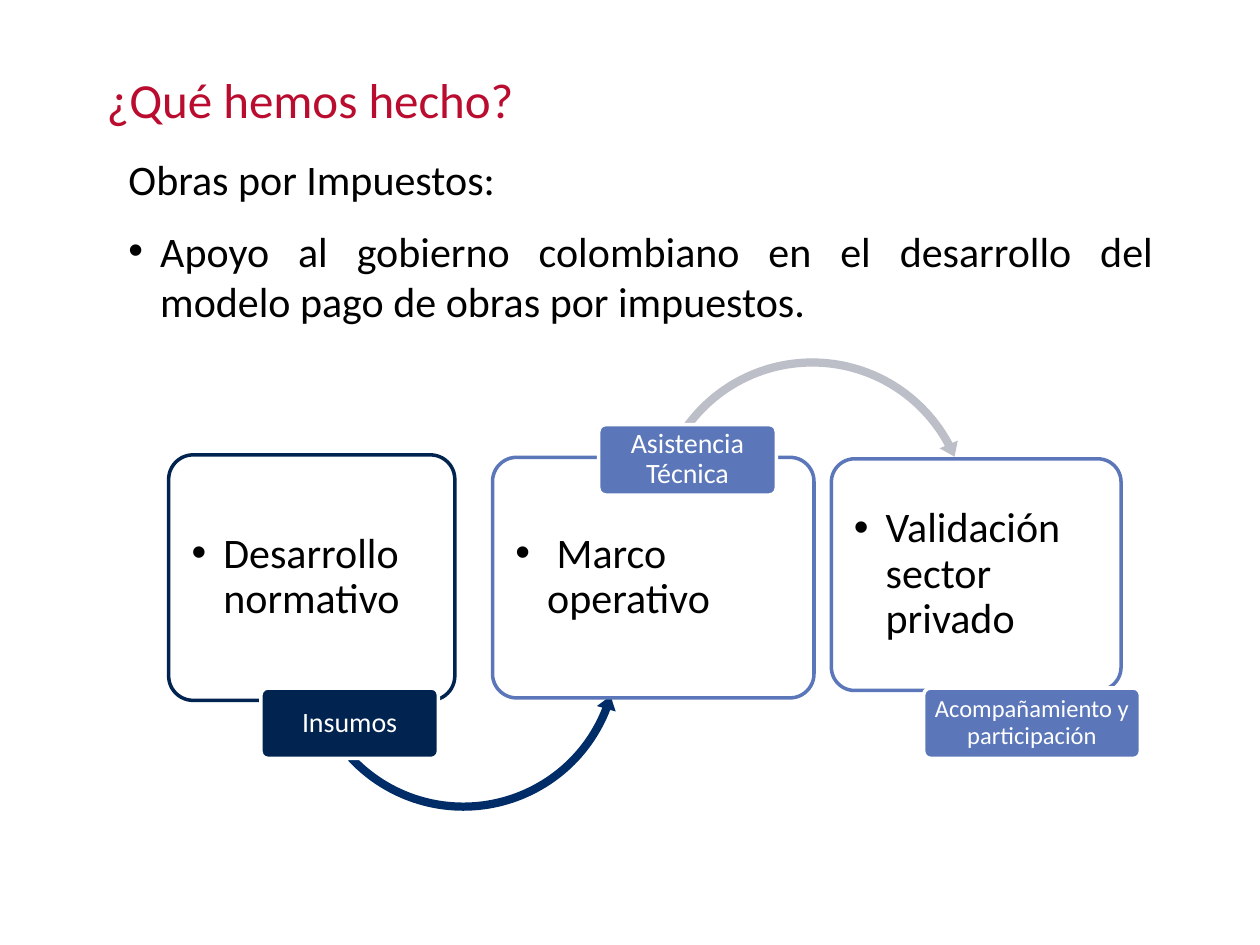
"""Build the slide on the steps of the works-for-taxes model."""
import lxml.etree
import pptx
import pptx.dml.color
import pptx.enum.shapes
import pptx.enum.text
import pptx.oxml.ns
import pptx.util

Cm, Pt = pptx.util.Cm, pptx.util.Pt
RGBColor = pptx.dml.color.RGBColor
MSO_SHAPE = pptx.enum.shapes.MSO_SHAPE
PP_ALIGN = pptx.enum.text.PP_ALIGN
MSO_ANCHOR = pptx.enum.text.MSO_ANCHOR
qn = pptx.oxml.ns.qn

FONT = "Calibri"
RED = RGBColor(0xBA, 0x0C, 0x2F)
BLACK = RGBColor(0x00, 0x00, 0x00)
WHITE = RGBColor(0xFF, 0xFF, 0xFF)
NAVY = RGBColor(0x00, 0x23, 0x50)
DEEP_BLUE = RGBColor(0x00, 0x2D, 0x67)
BLUE = RGBColor(0x5B, 0x77, 0xB9)
GREY = RGBColor(0xBC, 0xBE, 0xC8)


def place(s, left, top, width, height):
    """Move and size a shape, in centimetres."""
    s.left, s.top, s.width, s.height = Cm(left), Cm(top), Cm(width), Cm(height)


def set_frame(tf, anchor, margin_x, margin_y):
    """Set wrapping, anchor and margins of a text frame."""
    tf.word_wrap = True
    tf.auto_size = pptx.enum.text.MSO_AUTO_SIZE.NONE
    tf.vertical_anchor = anchor
    tf.margin_left = tf.margin_right = Cm(margin_x)
    tf.margin_top = tf.margin_bottom = Cm(margin_y)


def write(p, text, size, color, align, spacing=1.0, after=0):
    """Write one run into a paragraph and format both."""
    p.alignment, p.line_spacing = align, spacing
    p.space_before, p.space_after = Pt(0), Pt(after)
    r = p.add_run()
    r.text = text
    r.font.name, r.font.size = FONT, Pt(size)
    r.font.color.rgb = color


def set_bullet(p, char=None):
    """Give a paragraph a hanging bullet, or none at all."""
    pPr = p._p.get_or_add_pPr()
    indent = Cm(0.64) if char else 0
    pPr.set("marL", str(indent))
    pPr.set("indent", str(-indent))
    if char:
        lxml.etree.SubElement(pPr, qn("a:buFont")).set("typeface", "Arial")
        lxml.etree.SubElement(pPr, qn("a:buChar")).set("char", char)
    else:
        lxml.etree.SubElement(pPr, qn("a:buNone"))


def add_shape(slide, kind, box, fill, adjustments, line=None):
    """Add a flat preset shape."""
    s = slide.shapes.add_shape(kind, 0, 0, 0, 0)
    place(s, *box)
    s.shadow.inherit = False
    s.fill.solid()
    s.fill.fore_color.rgb = fill
    if line is None:
        s.line.fill.background()
    else:
        s.line.color.rgb = line
        s.line.width = Pt(2)
    for i, value in enumerate(adjustments):
        s.adjustments[i] = value
    return s


def add_card(slide, box, text, color):
    """Add an outlined card with one bulleted step."""
    s = add_shape(slide, MSO_SHAPE.ROUNDED_RECTANGLE, box, WHITE, [0.1], color)
    set_frame(s.text_frame, MSO_ANCHOR.MIDDLE, 0.32, 0.32)
    p = s.text_frame.paragraphs[0]
    write(p, text, 24, BLACK, PP_ALIGN.LEFT, 0.9)
    set_bullet(p, "•")


def add_label(slide, box, text, size, color):
    """Add a filled label that overlaps the edge of a card."""
    s = add_shape(slide, MSO_SHAPE.ROUNDED_RECTANGLE, box, color, [0.1], WHITE)
    set_frame(s.text_frame, MSO_ANCHOR.MIDDLE, 0.06, 0.05)
    write(s.text_frame.paragraphs[0], text, size, WHITE, PP_ALIGN.CENTER, 0.9)


def fill_placeholders(slide):
    """Fill the title and the body."""
    title, body = slide.shapes.title, slide.placeholders[1]
    place(title, 1.9, 1.27, 21.59, 1.45)
    set_frame(title.text_frame, MSO_ANCHOR.BOTTOM, 0.25, 0.13)
    write(title.text_frame.paragraphs[0], "¿Qué hemos hecho?", 28, RED, PP_ALIGN.LEFT)

    place(body, 2.34, 2.97, 21.16, 13.54)
    tf = body.text_frame
    set_frame(tf, MSO_ANCHOR.TOP, 0.25, 0.13)
    p = tf.paragraphs[0]
    write(p, "Obras por Impuestos:", 24, BLACK, PP_ALIGN.JUSTIFY, after=12)
    set_bullet(p)
    p = tf.add_paragraph()
    write(p, "Apoyo al gobierno colombiano en el desarrollo del modelo pago "
          "de obras por impuestos.", 24, BLACK, PP_ALIGN.JUSTIFY, after=12)
    set_bullet(p, "•")


def main():
    """Build and save the slide."""
    prs = pptx.Presentation()
    prs.slide_width, prs.slide_height = Cm(25.4), Cm(19.05)
    slide = prs.slides.add_slide(prs.slide_layouts[1])
    fill_placeholders(slide)

    add_card(slide, (3.4, 9.17, 5.77, 4.95), "Desarrollo normativo", NAVY)
    add_shape(slide, MSO_SHAPE.LEFT_CIRCULAR_ARROW, (6.05, 9.88, 6.58, 6.58),
              DEEP_BLUE, [0.025, 3.05, 12.73, 82.17, 0.03])
    add_label(slide, (5.26, 13.87, 3.58, 1.42), "Insumos", 16, NAVY)

    add_card(slide, (9.93, 9.22, 6.48, 4.85), " Marco operativo", BLUE)
    add_shape(slide, MSO_SHAPE.CIRCULAR_ARROW, (13.06, 7.11, 6.63, 6.63),
              GREY, [0.025, 3.02, 199.19, 129.72, 0.03])
    add_label(slide, (12.07, 8.56, 3.58, 1.42), "Asistencia Técnica", 16, BLUE)

    add_card(slide, (16.76, 9.25, 5.84, 4.67), "Validación sector privado", BLUE)
    add_label(slide, (18.62, 13.87, 4.37, 1.42),
              "Acompañamiento y participación", 14, BLUE)
    prs.save("out.pptx")


if __name__ == "__main__":
    main()
